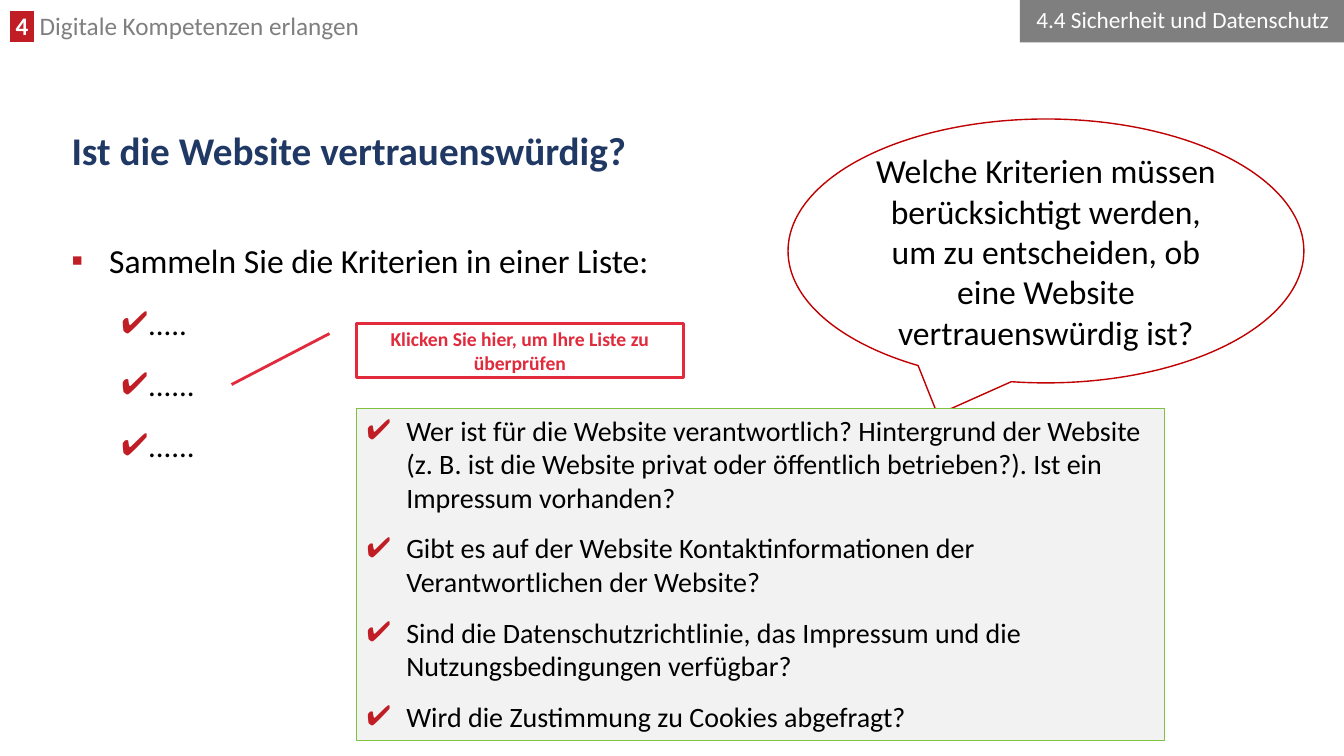
"""Build the slide on criteria for trustworthy websites."""
from lxml.etree import SubElement
from pptx import Presentation
from pptx.dml.color import RGBColor
from pptx.enum.shapes import MSO_SHAPE
from pptx.enum.text import MSO_ANCHOR, PP_ALIGN
from pptx.oxml.ns import qn
from pptx.util import Cm, Pt

CHAPTER_NUMBER = " 4 "
CHAPTER = " Digitale Kompetenzen erlangen"
SECTION = "4.4 Sicherheit und Datenschutz "
TITLE = "Ist die Website vertrauenswürdig?"
TASK = "Sammeln Sie die Kriterien in einer Liste:"
BLANKS = [".....", "......", "......"]
QUESTION = ("Welche Kriterien müssen berücksichtigt werden, um zu entscheiden, "
            "ob eine Website vertrauenswürdig ist?")
HINT = "Klicken Sie hier, um Ihre Liste zu überprüfen"
CRITERIA = [
    "Wer ist für die Website verantwortlich? Hintergrund der Website (z. B. ist die "
    "Website privat oder öffentlich betrieben?). Ist ein Impressum vorhanden?",
    "Gibt es auf der Website Kontaktinformationen der Verantwortlichen der Website?",
    "Sind die Datenschutzrichtlinie, das Impressum und die Nutzungsbedingungen verfügbar?",
    "Wird die Zustimmung zu Cookies abgefragt?",
]

FONT = "Calibri"
BLACK = RGBColor(0x00, 0x00, 0x00)
WHITE = RGBColor(0xFF, 0xFF, 0xFF)
GRAY = RGBColor(0x7F, 0x7F, 0x7F)
LIGHT_GRAY = RGBColor(0xF2, 0xF2, 0xF2)
NAVY = RGBColor(0x20, 0x38, 0x64)
RED = RGBColor(0xC0, 0x1E, 0x24)
DARK_RED = RGBColor(0xC0, 0x00, 0x00)
HINT_RED = RGBColor(0xE1, 0x2A, 0x3C)
GREEN = RGBColor(0x80, 0xC1, 0x41)


def format_paragraph(paragraph, size, color, bold=False, align=PP_ALIGN.LEFT, spacing=1.0):
    paragraph.alignment = align
    paragraph.line_spacing = spacing
    font = paragraph.font
    font.name, font.size, font.bold = FONT, Pt(size), bold
    font.color.rgb = color


def add_bullet(paragraph, character, margin, hanging):
    properties = paragraph._p.get_or_add_pPr()
    properties.set("marL", str(Cm(margin)))
    properties.set("indent", str(-Cm(hanging)))
    color = SubElement(properties, qn("a:buClr"))
    SubElement(color, qn("a:srgbClr"), val=str(RED))
    SubElement(properties, qn("a:buFont"), typeface="Arial")
    SubElement(properties, qn("a:buChar"), char=character)


def next_paragraph(frame, text):
    paragraph = frame.add_paragraph() if frame.text else frame.paragraphs[0]
    paragraph.text = text
    return paragraph


def add_text_box(slide, left, top, width, height):
    box = slide.shapes.add_textbox(Cm(left), Cm(top), Cm(width), Cm(height))
    box.text_frame.word_wrap = True
    return box.text_frame


def add_panel(slide, kind, box, fill, line=None, line_width=0, anchor=MSO_ANCHOR.MIDDLE):
    shape = slide.shapes.add_shape(kind, *(Cm(length) for length in box))
    shape.shadow.inherit = False
    shape.fill.solid()
    shape.fill.fore_color.rgb = fill
    if line is None:
        shape.line.fill.background()
    else:
        shape.line.color.rgb = line
        shape.line.width = Pt(line_width)
    shape.text_frame.word_wrap = True
    shape.text_frame.vertical_anchor = anchor
    return shape


def add_chapter(slide):
    paragraph = add_text_box(slide, 0, 0.28, 24.18, 0.89).paragraphs[0]
    format_paragraph(paragraph, 18, GRAY, spacing=0.8)
    number, name = paragraph.add_run(), paragraph.add_run()
    number.text, name.text = CHAPTER_NUMBER, CHAPTER
    number.font.bold = True
    number.font.color.rgb = WHITE
    highlight = SubElement(number.font._element, qn("a:highlight"))
    SubElement(highlight, qn("a:srgbClr"), val=str(RED))


def add_task(slide):
    frame = add_text_box(slide, 1.55, 5.72, 20.19, 11.94)
    paragraph = next_paragraph(frame, TASK)
    add_bullet(paragraph, "▪", 0.95, 0.95)
    format_paragraph(paragraph, 24, BLACK, spacing=1.2)
    for blank in BLANKS:
        paragraph = next_paragraph(frame, blank)
        paragraph.level = 1
        add_bullet(paragraph, "✔", 1.9, 0.64)
        paragraph.space_before = Pt(12)
        format_paragraph(paragraph, 22, BLACK, spacing=1.2)


def add_criteria(slide):
    panel = add_panel(slide, MSO_SHAPE.RECTANGLE, (8.99, 10.29, 20.37, 8.38),
                      LIGHT_GRAY, GREEN, 0.75, MSO_ANCHOR.TOP)
    for index, criterion in enumerate(CRITERIA):
        paragraph = next_paragraph(panel.text_frame, criterion)
        paragraph.level = 1
        add_bullet(paragraph, "✔", 1, 1)
        paragraph.space_before = Pt(6 if index else 0)
        paragraph.space_after = Pt(6)
        format_paragraph(paragraph, 20, BLACK)


def main():
    presentation = Presentation()
    presentation.slide_width, presentation.slide_height = Cm(33.87), Cm(19.05)
    slide = presentation.slides.add_slide(presentation.slide_layouts[5])

    title = slide.shapes.title
    title.left, title.top, title.width, title.height = Cm(1.55), Cm(3), Cm(30.73), Cm(1.68)
    title.text_frame.vertical_anchor = MSO_ANCHOR.MIDDLE
    format_paragraph(next_paragraph(title.text_frame, TITLE), 28, NAVY, True, spacing=0.9)

    add_chapter(slide)
    add_task(slide)

    bubble = add_panel(slide, MSO_SHAPE.OVAL_CALLOUT, (19.86, 3, 13, 6.65), WHITE, DARK_RED, 1)
    bubble.adjustments[0], bubble.adjustments[1] = -0.21, 0.62
    format_paragraph(next_paragraph(bubble.text_frame, QUESTION), 24, BLACK,
                     align=PP_ALIGN.CENTER)

    add_criteria(slide)

    hint = add_panel(slide, MSO_SHAPE.LINE_CALLOUT_1, (8.99, 8.15, 8.23, 1.37),
                     WHITE, HINT_RED, 2)
    format_paragraph(next_paragraph(hint.text_frame, HINT), 14, HINT_RED, True, PP_ALIGN.CENTER)

    section = add_panel(slide, MSO_SHAPE.RECTANGLE, (25.7, 0, 8.17, 1.07), GRAY)
    format_paragraph(next_paragraph(section.text_frame, SECTION), 16.6, WHITE,
                     align=PP_ALIGN.RIGHT, spacing=0.9)

    presentation.save("out.pptx")


if __name__ == "__main__":
    main()
